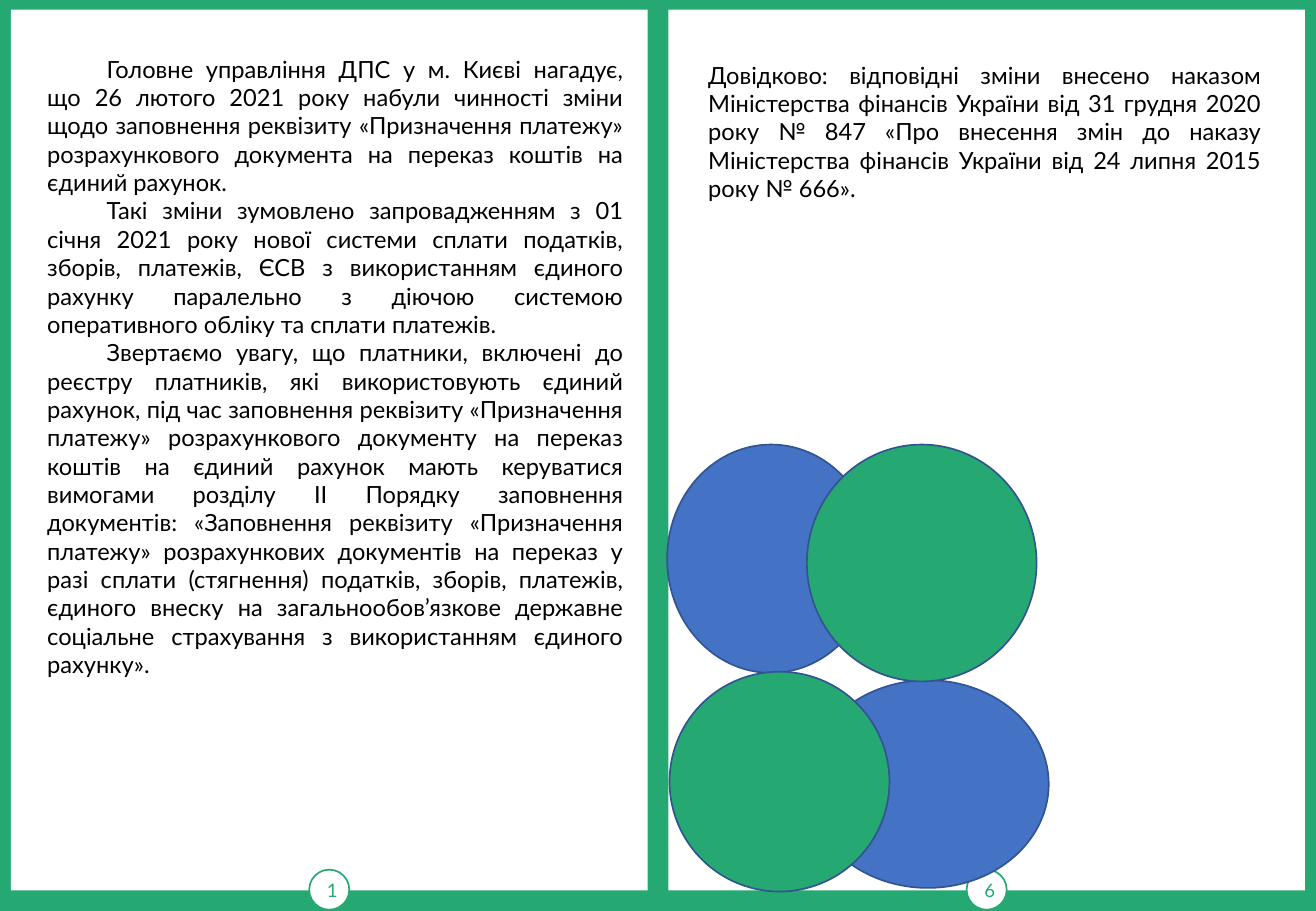
from pptx import Presentation
from pptx.dml.color import RGBColor
from pptx.enum.shapes import MSO_SHAPE
from pptx.enum.text import MSO_ANCHOR, MSO_AUTO_SIZE, PP_ALIGN
from pptx.util import Inches, Pt

RECTANGLE = MSO_SHAPE.RECTANGLE
OVAL = MSO_SHAPE.OVAL
CONNECTOR_CIRCLE = MSO_SHAPE.FLOWCHART_CONNECTOR
MIDDLE = MSO_ANCHOR.MIDDLE
FIT_SHAPE = MSO_AUTO_SIZE.SHAPE_TO_FIT_TEXT
CENTER = PP_ALIGN.CENTER
JUSTIFY = PP_ALIGN.JUSTIFY

GREEN, BLUE, NAVY = "25A872", "4472C4", "325491"
WHITE, BLACK = "FFFFFF", "000000"

REMINDER = [
    "Головне управління ДПС у м. Києві нагадує, що 26 лютого 2021 року набули "
    "чинності зміни щодо заповнення реквізиту «Призначення платежу» розрахункового "
    "документа на переказ коштів на єдиний рахунок. ",
    "Такі зміни зумовлено запровадженням з 01 січня 2021 року нової системи сплати "
    "податків, зборів, платежів, ЄСВ з використанням єдиного рахунку паралельно з "
    "діючою системою оперативного обліку та сплати платежів. ",
    "Звертаємо увагу, що платники, включені до реєстру платників, які використовують "
    "єдиний рахунок, під час заповнення реквізиту «Призначення платежу» "
    "розрахункового документу на переказ коштів на єдиний рахунок мають керуватися "
    "вимогами розділу II Порядку заповнення документів: «Заповнення реквізиту "
    "«Призначення платежу» розрахункових документів на переказ у разі сплати "
    "(стягнення) податків, зборів, платежів, єдиного внеску на загальнообов’язкове "
    "державне соціальне страхування з використанням єдиного рахунку». ",
]
REFERENCE = [
    "Довідково: відповідні зміни внесено наказом Міністерства фінансів України від "
    "31 грудня 2020 року № 847 «Про внесення змін до наказу Міністерства фінансів "
    "України від 24 липня 2015 року № 666». ",
]
PAGES = [(0.09, "1"), (5.5, "6")]
PAGE_TOP, PAGE_WIDTH, PAGE_HEIGHT = 0.08, 5.24, 7.25
BADGE_TOP, BADGE_SIZE = 7.16, 0.33
CIRCLES = [
    (5.49, 3.66, 1.71, 1.88, BLUE),
    (6.64, 5.6, 1.99, 1.71, BLUE),
    (5.51, 5.53, 1.81, 1.81, GREEN),
    (6.64, 3.66, 1.89, 1.95, GREEN),
]


def rgb(color):
    return RGBColor.from_string(color)


class Booklet:
    font = "Lato"

    def __init__(self, slide):
        self.slide = slide

    def background(self, color):
        fill = self.slide.background.fill
        fill.solid()
        fill.fore_color.rgb = rgb(color)

    def shape(self, preset, left, top, width, height, color, outline=None):
        shape = self.slide.shapes.add_shape(
            preset, Inches(left), Inches(top), Inches(width), Inches(height))
        shape.shadow.inherit = False
        shape.fill.solid()
        shape.fill.fore_color.rgb = rgb(color)
        if outline:
            shape.line.color.rgb = rgb(outline)
            shape.line.width = Pt(1)
        else:
            shape.line.fill.background()
        return shape

    def add_text(self, paragraph, text, size, color, align):
        paragraph.alignment = align
        run = paragraph.add_run()
        run.text = text
        run.font.name = self.font
        run.font.size = Pt(size)
        run.font.color.rgb = rgb(color)

    def page(self, left, number):
        """White page with its number in a round badge at the bottom edge."""
        self.shape(RECTANGLE, left, PAGE_TOP, PAGE_WIDTH, PAGE_HEIGHT, WHITE)
        badge_left = left + (PAGE_WIDTH - BADGE_SIZE) / 2
        badge = self.shape(OVAL, badge_left, BADGE_TOP, BADGE_SIZE, BADGE_SIZE, WHITE, GREEN)
        badge.text_frame.vertical_anchor = MIDDLE
        self.add_text(badge.text_frame.paragraphs[0], number, 11, GREEN, CENTER)

    def body(self, left, top, width, height, texts, indent=0):
        box = self.slide.shapes.add_textbox(
            Inches(left), Inches(top), Inches(width), Inches(height))
        frame = box.text_frame
        frame.word_wrap = True
        frame.auto_size = FIT_SHAPE
        for index, text in enumerate(texts):
            paragraph = frame.add_paragraph() if index else frame.paragraphs[0]
            if indent:
                properties = paragraph._p.get_or_add_pPr()
                properties.set("marL", "0")
                properties.set("indent", str(Inches(indent)))
            self.add_text(paragraph, text, 14, BLACK, JUSTIFY)


def main():
    presentation = Presentation()
    presentation.slide_width = Inches(10.83)
    presentation.slide_height = Inches(7.5)
    booklet = Booklet(presentation.slides.add_slide(presentation.slide_layouts[6]))

    booklet.background(GREEN)
    for left, number in PAGES:
        booklet.page(left, number)
    booklet.body(0.29, 0.4, 4.94, 6.62, REMINDER, indent=0.49)
    booklet.body(5.73, 0.45, 4.75, 1.51, REFERENCE)
    for left, top, width, height, color in CIRCLES:
        booklet.shape(CONNECTOR_CIRCLE, left, top, width, height, color, NAVY)

    presentation.save("out.pptx")


if __name__ == "__main__":
    main()
